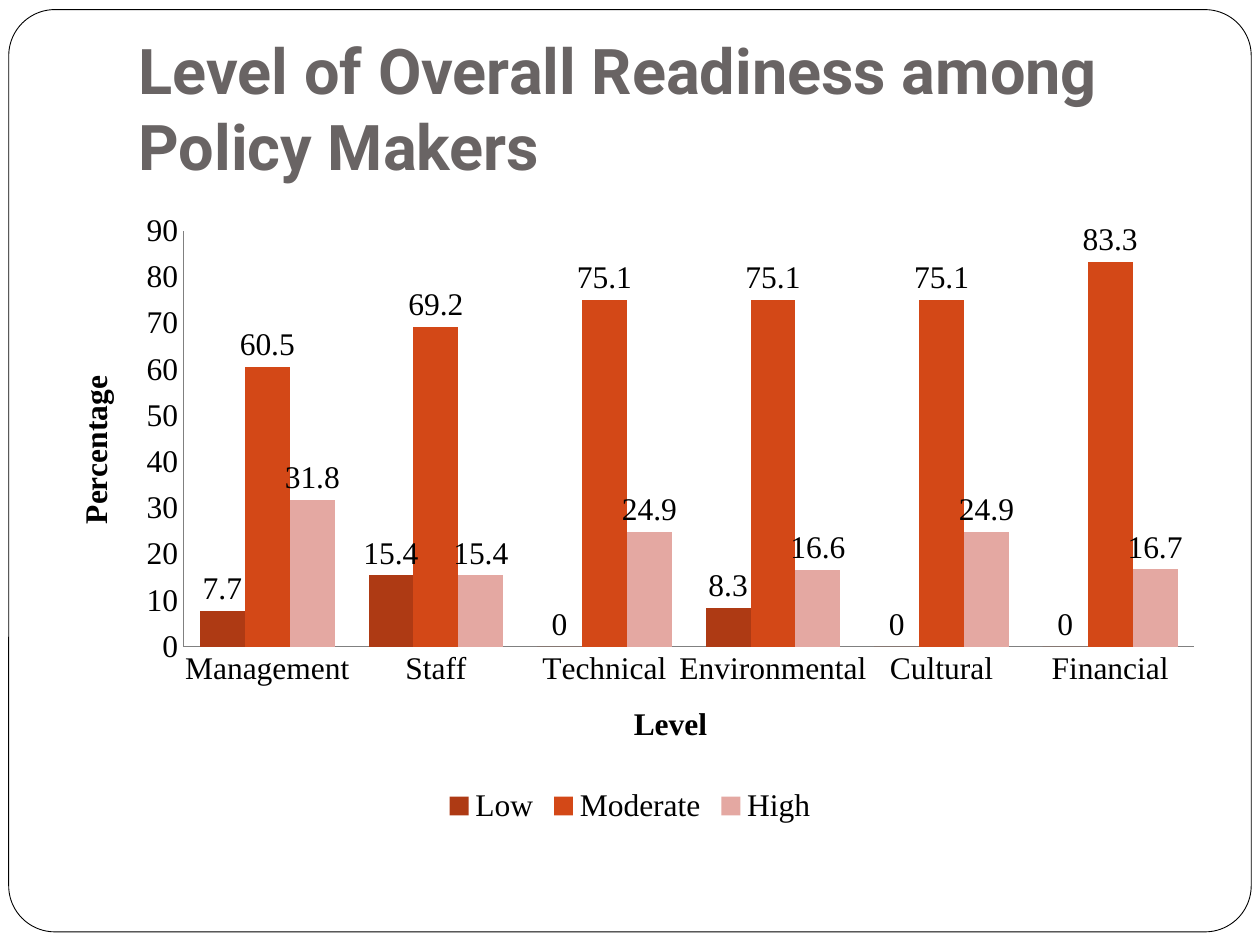
import pptx
import pptx.chart.data
import pptx.dml.color
import pptx.enum.chart
import pptx.enum.shapes
import pptx.enum.text
import pptx.oxml
import pptx.oxml.ns
import pptx.util

Pt = pptx.util.Pt
RGBColor = pptx.dml.color.RGBColor

BLACK = RGBColor(0x00, 0x00, 0x00)
WHITE = RGBColor(0xFF, 0xFF, 0xFF)
TITLE_GRAY = RGBColor(0x69, 0x64, 0x64)
AXIS_GRAY = RGBColor(0x80, 0x80, 0x80)
LOW = RGBColor(0xAE, 0x3A, 0x14)
MODERATE = RGBColor(0xD3, 0x48, 0x17)
HIGH = RGBColor(0xE4, 0xA8, 0xA2)

CATEGORIES = ["Management", "Staff", "Technical", "Environmental", "Cultural", "Financial"]
SERIES = [
    ("Low", LOW, (7.7, 15.4, 0, 8.3, 0, 0)),
    ("Moderate", MODERATE, (60.5, 69.2, 75.1, 75.1, 75.1, 83.3)),
    ("High", HIGH, (31.8, 15.4, 24.9, 16.6, 24.9, 16.7)),
]
PLOT_BOX = {"x": 0.12, "y": 0.05, "w": 0.86, "h": 0.66}


def format_font(font, size=18, name="Times New Roman", color=BLACK, bold=False):
    font.size = Pt(size)
    font.name = name
    font.bold = bold
    font.color.rgb = color


def set_text(tf, text, **fmt):
    p = tf.paragraphs[0]
    r = p.add_run()
    r.text = text
    format_font(r.font, **fmt)


def add_frame(slide, left, top, width, height):
    sp = slide.shapes.add_shape(
        pptx.enum.shapes.MSO_SHAPE.ROUNDED_RECTANGLE,
        Pt(left), Pt(top), Pt(width), Pt(height))
    sp.adjustments[0] = 0.05
    sp.shadow.inherit = False
    sp.fill.solid()
    sp.fill.fore_color.rgb = WHITE
    sp.line.color.rgb = BLACK
    sp.line.width = Pt(0.5)


def place_title(slide, title, left, top, width, height):
    title.left, title.top = Pt(left), Pt(top)
    title.width, title.height = Pt(width), Pt(height)
    tf = title.text_frame
    tf.word_wrap = True
    tf.auto_size = pptx.enum.text.MSO_AUTO_SIZE.NONE
    tf.vertical_anchor = pptx.enum.text.MSO_ANCHOR.BOTTOM
    tf.margin_left = tf.margin_right = tf.margin_bottom = Pt(7.2)
    tf.margin_top = Pt(3.6)
    p = tf.paragraphs[0]
    p.alignment = pptx.enum.text.PP_ALIGN.LEFT
    p.line_spacing = 1.0
    set_text(tf, "Level of Overall Readiness among Policy Makers",
             size=36, name="Roboto", color=TITLE_GRAY, bold=True)
    slide.shapes._spTree.append(title._element)


def set_plot_layout(chart, box):
    qn = pptx.oxml.ns.qn
    plot_area = chart._chartSpace.find(".//" + qn("c:plotArea"))
    for old in plot_area.findall(qn("c:layout")):
        plot_area.remove(old)
    values = "".join(f'<c:{key} val="{val}"/>' for key, val in box.items())
    plot_area.insert(0, pptx.oxml.parse_xml(
        f'<c:layout {pptx.oxml.ns.nsdecls("c")}><c:manualLayout>'
        '<c:layoutTarget val="inner"/><c:xMode val="edge"/><c:yMode val="edge"/>'
        f'{values}</c:manualLayout></c:layout>'))


def format_axis(axis, title):
    axis.has_major_gridlines = False
    axis.major_tick_mark = pptx.enum.chart.XL_TICK_MARK.NONE
    axis.minor_tick_mark = pptx.enum.chart.XL_TICK_MARK.NONE
    axis.format.line.color.rgb = AXIS_GRAY
    axis.format.line.width = Pt(0.75)
    format_font(axis.tick_labels.font)
    set_text(axis.axis_title.text_frame, title, bold=True)


def add_readiness_chart(slide, left, top, width, height):
    data = pptx.chart.data.CategoryChartData()
    data.categories = CATEGORIES
    for name, _, values in SERIES:
        data.add_series(name, values)
    chart = slide.shapes.add_chart(
        pptx.enum.chart.XL_CHART_TYPE.COLUMN_CLUSTERED,
        Pt(left), Pt(top), Pt(width), Pt(height), data).chart
    chart.has_title = False
    format_font(chart.font)
    format_axis(chart.category_axis, "Level")
    format_axis(chart.value_axis, "Percentage")
    chart.value_axis.minimum_scale = 0
    chart.value_axis.maximum_scale = 90
    chart.value_axis.major_unit = 10

    chart.has_legend = True
    chart.legend.position = pptx.enum.chart.XL_LEGEND_POSITION.BOTTOM
    chart.legend.include_in_layout = False
    format_font(chart.legend.font)

    plot = chart.plots[0]
    plot.gap_width = 75
    plot.overlap = 0
    plot.vary_by_categories = False
    for series, (_, color, _) in zip(plot.series, SERIES):
        series.format.fill.solid()
        series.format.fill.fore_color.rgb = color
        labels = series.data_labels
        labels.show_value = True
        labels.position = pptx.enum.chart.XL_LABEL_POSITION.OUTSIDE_END
        format_font(labels.font)
    set_plot_layout(chart, PLOT_BOX)


def main():
    prs = pptx.Presentation()
    prs.slide_width, prs.slide_height = Pt(720), Pt(540)
    s = prs.slides.add_slide(prs.slide_layouts[5])
    add_frame(s, 5, 5.5, 710, 527)
    place_title(s, s.shapes.title, 72, 21.6, 612, 90)
    add_readiness_chart(s, 24, 114, 672, 360)
    prs.save("out.pptx")


if __name__ == "__main__":
    main()
